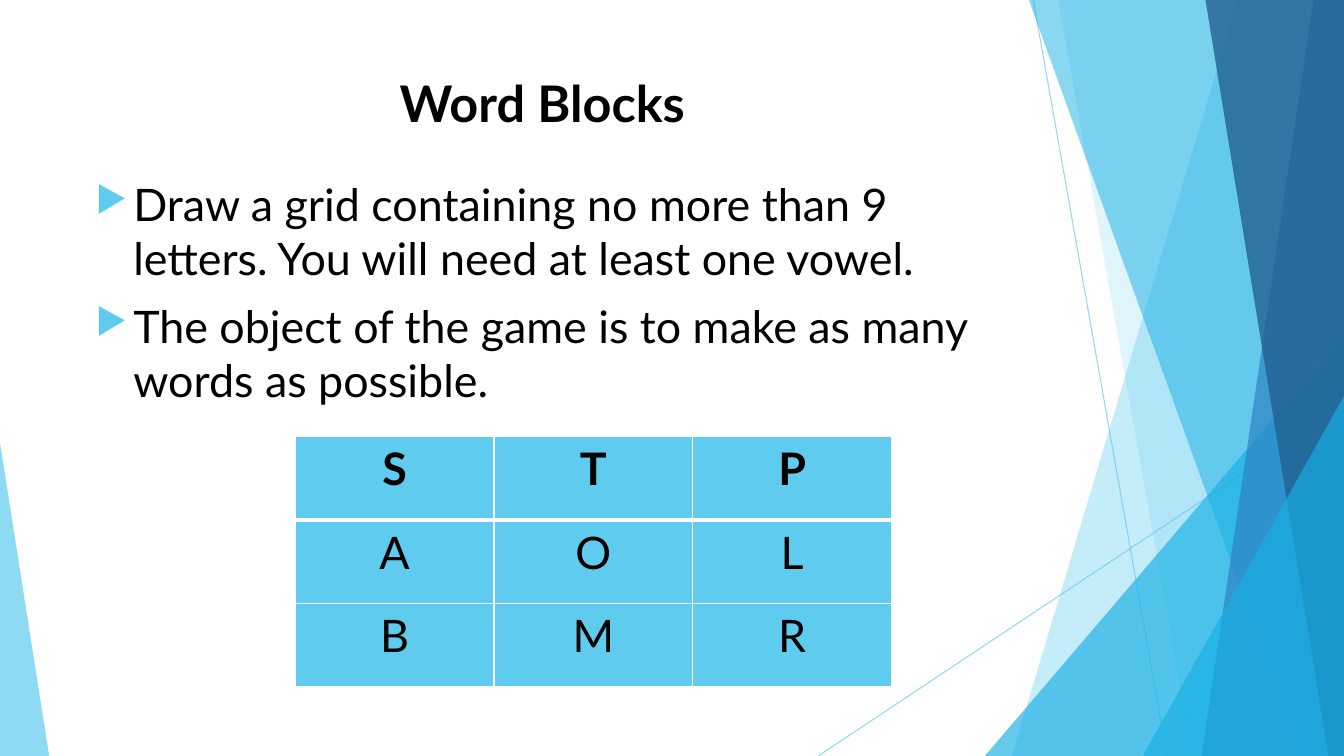
import pptx
import pptx.util
import pptx.dml.color
import pptx.enum.shapes
import pptx.enum.text
import pptx.oxml
import pptx.oxml.ns

Cm, Pt = pptx.util.Cm, pptx.util.Pt
ALIGN = pptx.enum.text.PP_ALIGN
FONT = "Lato"
COLORS = {"sky": "5FCBEF", "cyan": "17B0E4", "blue": "2E83C3",
          "navy": "226292", "black": "000000", "white": "FFFFFF"}
WIDTH, HEIGHT = 33.87, 19.05

TITLE = "Word Blocks "
RULES = [
    "Draw a grid containing no more than 9 letters. You will need at least one vowel.",
    "The object of the game is to make as many words as possible.",
]
LETTERS = ["STP", "AOL", "BMR"]

# Start and end points in cm
HAIRLINES = [((26.04, 0), (29.41, HEIGHT)), ((WIDTH, 10.24), (20.62, HEIGHT))]
# Back to front. Band: top x, bottom x of the slanted edge; triangle: left, top, width, apex
FACETS = [
    ("band", (31.19, 25.5), "sky", 36),
    ("band", (26.67, 30.05), "sky", 20),
    ("triangle", (24.82, 8.46, 9.05, 1), "cyan", 66),
    ("band", (25.93, 32.79), "cyan", 50),
    ("band", (33.1, 30.28), "blue", 70),
    ("band", (30.38, 33.48), "navy", 80),
    ("triangle", (28.8, 9.98, 5.07, 1), "cyan", 66),
    ("triangle", (0, 11.15, 1.24, 0), "sky", 70),
]
GRID_LEFT, GRID_TOP, COL_WIDTH, ROW_HEIGHT = 7.44, 11, 5.01, 2.1


def rgb(name):
    return pptx.dml.color.RGBColor.from_string(COLORS[name])


def add_xml(parent, tag, attrs="", inner=""):
    ns = pptx.oxml.ns.nsdecls("a")
    parent.append(pptx.oxml.parse_xml(f"<a:{tag} {ns} {attrs}>{inner}</a:{tag}>"))


def paint(fill, parent, color, opacity):
    """Set a solid fill and its opacity in percent."""
    fill.solid()
    fill.fore_color.rgb = rgb(color)
    for clr in parent.iter(pptx.oxml.ns.qn("a:srgbClr")):
        add_xml(clr, "alpha", f'val="{opacity * 1000}"')


def write(p, text, size=32, bold=False, align=ALIGN.LEFT, bullet=False, before=0):
    if bullet:
        pPr = p._p.get_or_add_pPr()
        pPr.set("marL", str(Cm(0.95)))
        pPr.set("indent", str(-Cm(0.95)))
        add_xml(pPr, "buClr", inner=f'<a:srgbClr val="{COLORS["sky"]}"/>')
        add_xml(pPr, "buSzPct", 'val="80000"')
        add_xml(pPr, "buChar", 'char="▶"')
    p.alignment = align
    p.space_before = Pt(before)
    r = p.add_run()
    r.text = text
    r.font.name, r.font.size, r.font.bold = FONT, Pt(size), bold
    r.font.color.rgb = rgb("black")


def add_box(slide, left, top, width, height):
    tf = slide.shapes.add_textbox(Cm(left), Cm(top), Cm(width), Cm(height)).text_frame
    tf.word_wrap = True
    return tf


def add_hairline(slide, start, end):
    line = slide.shapes.add_connector(pptx.enum.shapes.MSO_CONNECTOR.STRAIGHT,
                                      *map(Cm, start + end))
    line.line.width = Pt(0.75)
    paint(line.line.fill, line.line._get_or_add_ln(), "sky", 70)
    add_xml(line._element.spPr, "effectLst")


def add_facet(slide, kind, place, color, opacity):
    if kind == "band":
        top_x, bottom_x = place
        outline = slide.shapes.build_freeform(Cm(top_x), 0)
        corners = [(WIDTH, 0), (WIDTH, HEIGHT), (bottom_x, HEIGHT)]
        outline.add_line_segments([(Cm(x), Cm(y)) for x, y in corners], close=True)
        sp = outline.convert_to_shape()
    else:
        left, top, width, apex = place
        sp = slide.shapes.add_shape(pptx.enum.shapes.MSO_SHAPE.ISOSCELES_TRIANGLE,
                                    Cm(left), Cm(top), Cm(width), Cm(HEIGHT - top))
        sp.adjustments[0] = apex
    sp.shadow.inherit = False
    paint(sp.fill, sp._element.spPr, color, opacity)
    sp.line.fill.background()


def add_letter_grid(slide):
    rows, cols = len(LETTERS), len(LETTERS[0])
    table = slide.shapes.add_table(rows, cols, Cm(GRID_LEFT), Cm(GRID_TOP),
                                   Cm(cols * COL_WIDTH), Cm(rows * ROW_HEIGHT)).table
    white = f'<a:solidFill><a:srgbClr val="{COLORS["white"]}"/></a:solidFill>'
    for i, letters in enumerate(LETTERS):
        for j, letter in enumerate(letters):
            cell = table.cell(i, j)
            tcPr = cell._tc.get_or_add_tcPr()
            for side in "LRTB":
                under_header = (i, side) in ((0, "B"), (1, "T"))
                add_xml(tcPr, f"ln{side}", f'w="{Pt(3 if under_header else 1)}"', white)
            cell.fill.solid()
            cell.fill.fore_color.rgb = rgb("sky")
            write(cell.text_frame.paragraphs[0], letter, bold=i == 0, align=ALIGN.CENTER)


def main():
    prs = pptx.Presentation()
    prs.slide_width, prs.slide_height = Cm(WIDTH), Cm(HEIGHT)
    s = prs.slides.add_slide(prs.slide_layouts[6])
    for start, end in HAIRLINES:
        add_hairline(s, start, end)
    for facet in FACETS:
        add_facet(s, *facet)

    title = add_box(s, 1.88, 1.7, 23.88, 3.66)
    write(title.paragraphs[0], TITLE, size=36, bold=True, align=ALIGN.CENTER)
    body = add_box(s, 2.16, 4.34, 23.88, 6.35)
    for i, rule in enumerate(RULES):
        p = body.add_paragraph() if i else body.paragraphs[0]
        write(p, rule, bullet=True, before=10 if i else 0)
    add_letter_grid(s)
    prs.save("out.pptx")


if __name__ == "__main__":
    main()
